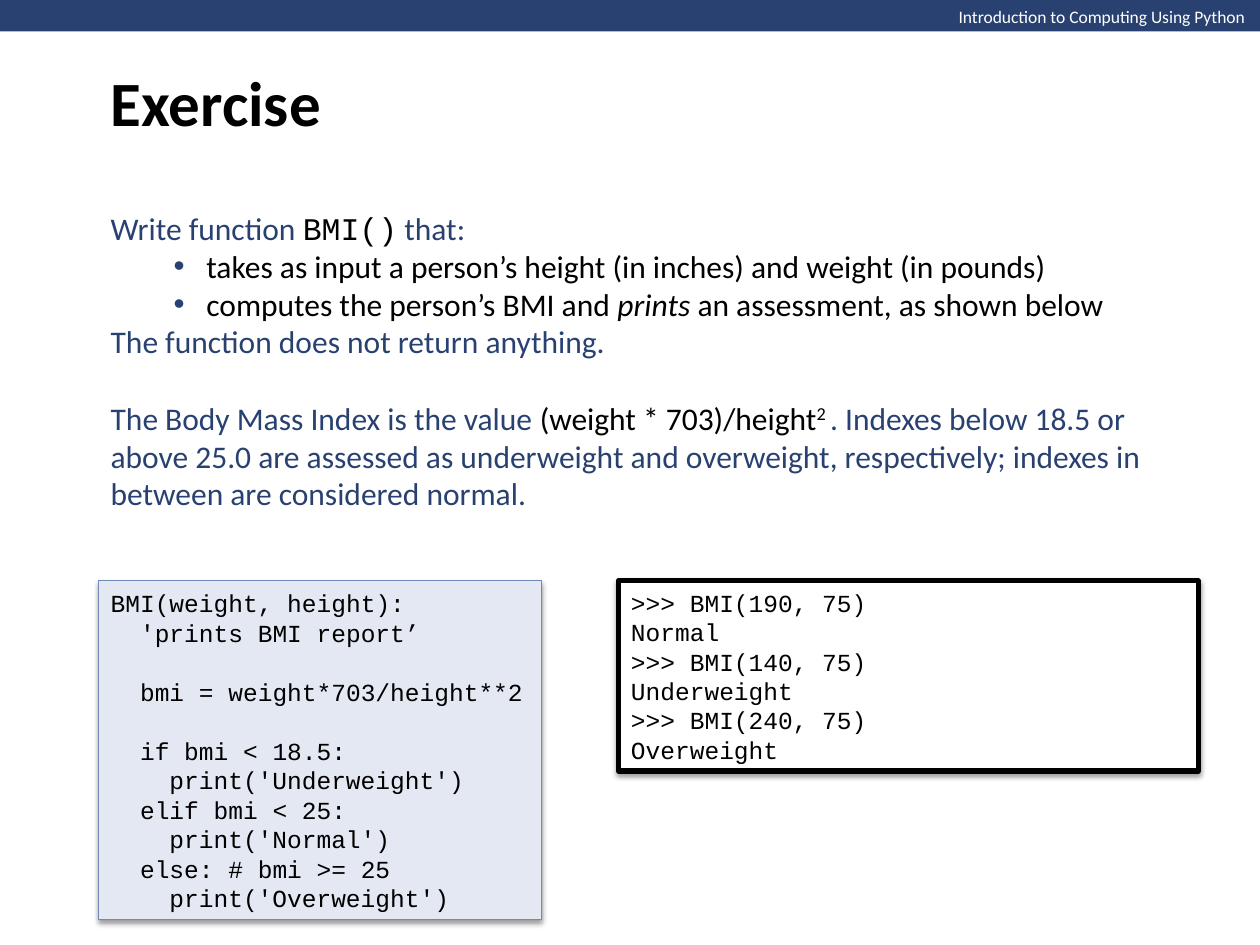
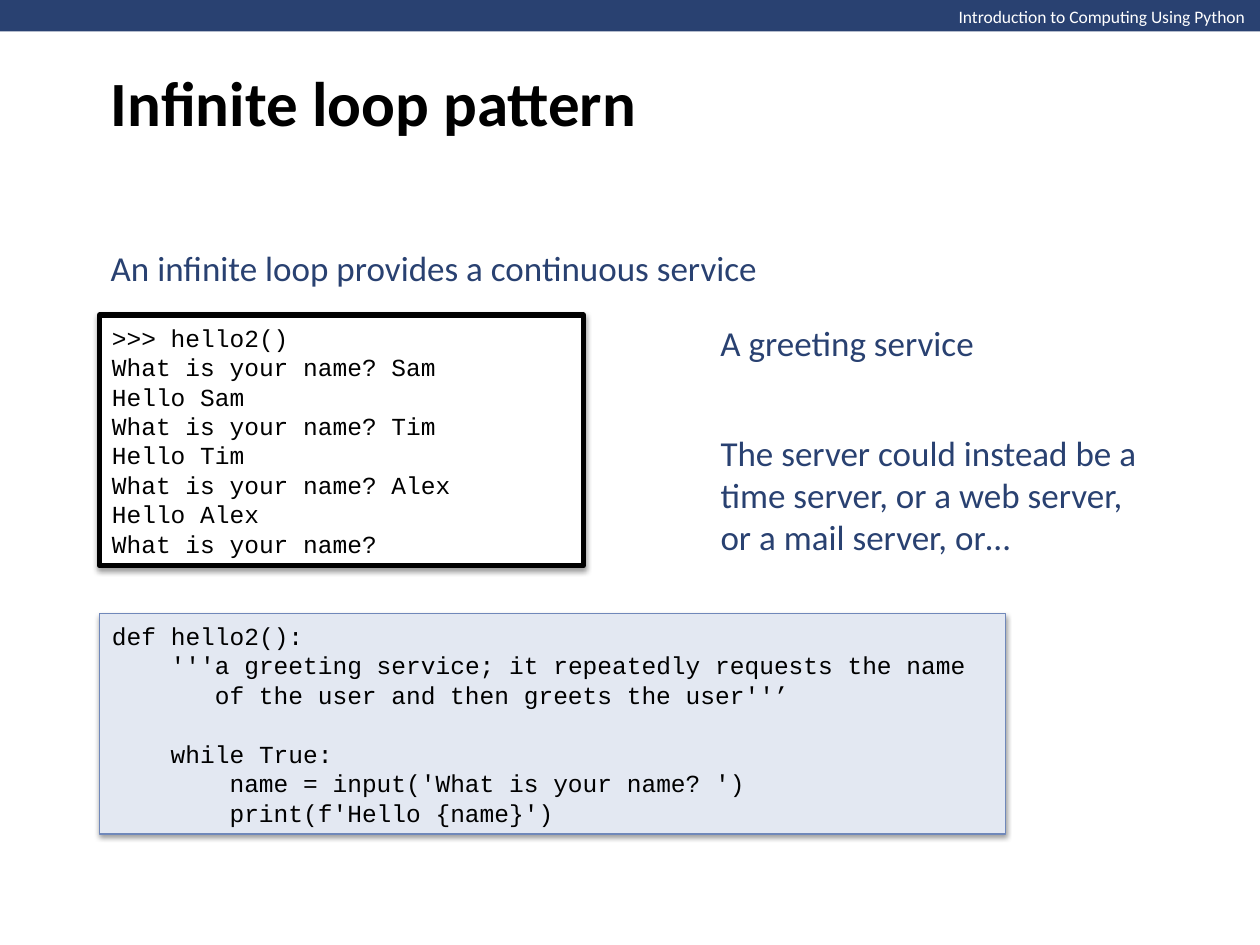
from dataclasses import dataclass

import pptx
import pptx.util
import pptx.dml.color
import pptx.enum.shapes
import pptx.enum.text
import pptx.oxml
import pptx.oxml.ns
import pptx.presentation
import pptx.shapes.base
import pptx.slide
import pptx.text.text

COLORS = {
    "navy": "294171",
    "black": "000000",
    "white": "FFFFFF",
    "pale": "E3E8F2",
    "steel": "7088BA",
}
SANS, MONO = "Calibri", "Courier New"
WIDTH, HEIGHT = pptx.util.Inches(10), pptx.util.Inches(7.5)
COLS, ROWS = 100, 75
MARGIN = 7.8
CODE_SIZE, CODE_LINE, CODE_CHAR = 14, 17, 8.4
BODY_SIZE, BODY_LINE = 18, 22
NOTE_SIZE = 20
ANCHOR = pptx.enum.text.MSO_ANCHOR


@dataclass(frozen=True)
class Box:
    col: float
    row: float
    cols: float
    rows: float

    def emu(self) -> tuple[int, int, int, int]:
        cw, rh = WIDTH / COLS, HEIGHT / ROWS
        return (round(self.col * cw), round(self.row * rh),
                round(self.cols * cw), round(self.rows * rh))


@dataclass(frozen=True)
class Span:
    text: str
    color: str = "navy"
    font: str = SANS
    italic: bool = False
    superscript: bool = False


@dataclass(frozen=True)
class Para:
    spans: tuple[Span, ...]
    bullet: bool = False
    space_before: float = 0


@dataclass(frozen=True)
class PanelStyle:
    fill: str
    line: str
    width: float


@dataclass(frozen=True)
class Panel:
    box: Box
    style: PanelStyle
    code: str


@dataclass(frozen=True)
class Note:
    box: Box
    text: str
    wrap: bool = False


SOURCE = PanelStyle("pale", "steel", 0.75)
SHELL = PanelStyle("white", "black", 3)

BMI_TASK = (
    Para((Span("Write function "), Span("BMI()", "black", MONO), Span(" that:"))),
    Para((Span("takes as input a person’s height (in inches) and weight (in pounds)", "black"),),
         bullet=True),
    Para((Span("computes the person’s BMI and ", "black"),
          Span("prints", "black", italic=True),
          Span(" an assessment, as shown below", "black")), bullet=True),
    Para((Span("The function does not return anything."),)),
    Para((Span("The Body Mass Index is the value "),
          Span("(weight * 703)/height", "black"),
          Span("2 ", "black", superscript=True),
          Span(". Indexes below 18.5 or above 25.0 are assessed as underweight and "
               "overweight, respectively; indexes in between are considered normal.")),
         space_before=BODY_LINE),
)

BMI_SHELL = """>>> BMI(190, 75)
Normal
>>> BMI(140, 75)
Underweight
>>> BMI(240, 75)
Overweight"""

BMI_SOURCE = """BMI(weight, height):
  'prints BMI report’

  bmi = weight*703/height**2

  if bmi < 18.5:
    print('Underweight')
  elif bmi < 25:
    print('Normal')
  else: # bmi >= 25
    print('Overweight')"""

HELLO_SHELL = """>>> hello2()
What is your name? Sam
Hello Sam
What is your name? Tim
Hello Tim
What is your name? Alex
Hello Alex
What is your name?"""

HELLO_SOURCE = """def hello2():
    '''a greeting service; it repeatedly requests the name
       of the user and then greets the user''’

    while True:
        name = input('What is your name? ')
        print(f'Hello {name}')"""


def rgb(name: str) -> pptx.dml.color.RGBColor:
    return pptx.dml.color.RGBColor.from_string(COLORS[name])


def style_run(r: pptx.text.text._Run, size: float, color: str,
              font: str = SANS, bold: bool = False) -> None:
    r.font.size = pptx.util.Pt(size)
    r.font.name = font
    r.font.bold = bold
    r.font.color.rgb = rgb(color)


def set_indent(p: pptx.text.text._Paragraph, left: int, first: int = 0) -> None:
    pPr = p._p.get_or_add_pPr()
    pPr.set("marL", str(left))
    pPr.set("indent", str(first))


def add_bullet(p: pptx.text.text._Paragraph) -> None:
    set_indent(p, pptx.util.Inches(0.76), -pptx.util.Inches(0.26))
    ns = pptx.oxml.ns.nsdecls("a")
    pPr = p._p.get_or_add_pPr()
    for xml in (f'<a:buClr {ns}><a:srgbClr val="{COLORS["navy"]}"/></a:buClr>',
                f'<a:buFont {ns} typeface="Arial"/>',
                f'<a:buChar {ns} char="•"/>'):
        pPr.append(pptx.oxml.parse_xml(xml))


def add_shadow(sp: pptx.shapes.base.BaseShape) -> None:
    sp.shadow.inherit = False
    effects = sp._element.spPr.find(pptx.oxml.ns.qn("a:effectLst"))
    effects.append(pptx.oxml.parse_xml(
        f'<a:outerShdw {pptx.oxml.ns.nsdecls("a")} blurRad="{pptx.util.Pt(3.1)}" '
        f'dist="{pptx.util.Pt(1.6)}" dir="5400000" rotWithShape="0">'
        f'<a:srgbClr val="{COLORS["black"]}"><a:alpha val="38000"/></a:srgbClr>'
        '</a:outerShdw>'))


def add_rect(s: pptx.slide.Slide, box: Box, fill: str) -> pptx.shapes.base.BaseShape:
    sp = s.shapes.add_shape(pptx.enum.shapes.MSO_SHAPE.RECTANGLE, *box.emu())
    sp.shadow.inherit = False
    sp.fill.solid()
    sp.fill.fore_color.rgb = rgb(fill)
    sp.line.fill.background()
    return sp


def add_text(s: pptx.slide.Slide, note: Note, size: float, color: str,
             anchor: ANCHOR = ANCHOR.MIDDLE) -> None:
    tf = s.shapes.add_textbox(*note.box.emu()).text_frame
    tf.word_wrap = note.wrap
    tf.vertical_anchor = anchor
    tf.text = note.text
    style_run(tf.paragraphs[0].runs[0], size, color)


def add_panel(s: pptx.slide.Slide, panel: Panel) -> None:
    sp = add_rect(s, panel.box, panel.style.fill)
    sp.line.color.rgb = rgb(panel.style.line)
    sp.line.width = pptx.util.Pt(panel.style.width)
    add_shadow(sp)
    tf = sp.text_frame
    tf.word_wrap = True
    tf.vertical_anchor = ANCHOR.MIDDLE
    lines = panel.code.splitlines()
    tf.text = "\n".join(line.lstrip() for line in lines if line)
    paragraphs = iter(tf.paragraphs)
    gap = 0
    for line in lines:
        if not line:
            gap += CODE_LINE
            continue
        p = next(paragraphs)
        p.alignment = pptx.enum.text.PP_ALIGN.LEFT
        p.space_before = pptx.util.Pt(gap)
        gap = 0
        set_indent(p, pptx.util.Pt(CODE_CHAR * (len(line) - len(line.lstrip()))))
        style_run(p.runs[0], CODE_SIZE, "black", MONO)


def add_body(s: pptx.slide.Slide, box: Box, paras: tuple[Para, ...]) -> None:
    tf = s.shapes.add_textbox(*box.emu()).text_frame
    tf.word_wrap = True
    for i, para in enumerate(paras):
        p = tf.add_paragraph() if i else tf.paragraphs[0]
        p.space_before = pptx.util.Pt(para.space_before)
        if para.bullet:
            add_bullet(p)
        for span in para.spans:
            r = p.add_run()
            r.text = span.text
            style_run(r, BODY_SIZE, span.color, span.font)
            r.font.italic = span.italic
            if span.superscript:
                r._r.get_or_add_rPr().set("baseline", "30000")


def add_slide(prs: pptx.presentation.Presentation, title: str) -> pptx.slide.Slide:
    s = prs.slides.add_slide(prs.slide_layouts[5])
    add_rect(s, Box(0, 0, COLS, 2.5), "navy")
    add_text(s, Note(Box(75.1, 0, 25, 2.7), "Introduction to Computing Using Python"),
             10, "white", ANCHOR.TOP)
    sp = s.shapes.title
    sp.left, sp.top, sp.width, sp.height = Box(MARGIN, 0, 85, 16.1).emu()
    tf = sp.text_frame
    tf.text = title
    tf.vertical_anchor = ANCHOR.MIDDLE
    p = tf.paragraphs[0]
    p.alignment = pptx.enum.text.PP_ALIGN.LEFT
    style_run(p.runs[0], 36, "black", bold=True)
    return s


def build_exercise(prs: pptx.presentation.Presentation) -> None:
    s = add_slide(prs, "Exercise")
    add_body(s, Box(MARGIN, 16.1, 85, 25.2), BMI_TASK)
    for panel in (Panel(Box(49.1, 46.1, 46, 15.1), SHELL, BMI_SHELL),
                  Panel(Box(MARGIN, 46.1, 35.2, 26.9), SOURCE, BMI_SOURCE)):
        add_panel(s, panel)


def build_infinite_loop(prs: pptx.presentation.Presentation) -> None:
    s = add_slide(prs, "Infinite loop pattern")
    for panel in (Panel(Box(MARGIN + 0.1, 48.7, 71.9, 17.5), SOURCE, HELLO_SOURCE),
                  Panel(Box(MARGIN + 0.1, 25, 38.4, 19.9), SHELL, HELLO_SHELL)):
        add_panel(s, panel)
    for note in (
        Note(Box(MARGIN, 19, 53.9, 4.4), "An infinite loop provides a continuous service"),
        Note(Box(56.2, 25, 22.3, 4.4), "A greeting service"),
        Note(Box(56.2, 33.7, 36.9, 11.1),
             "The server could instead be a time server, or a web server, "
             "or a mail server, or…", wrap=True),
    ):
        add_text(s, note, NOTE_SIZE, "navy")


def main() -> None:
    prs = pptx.Presentation()
    prs.slide_width, prs.slide_height = WIDTH, HEIGHT
    build_exercise(prs)
    build_infinite_loop(prs)
    prs.save("out.pptx")


if __name__ == "__main__":
    main()
